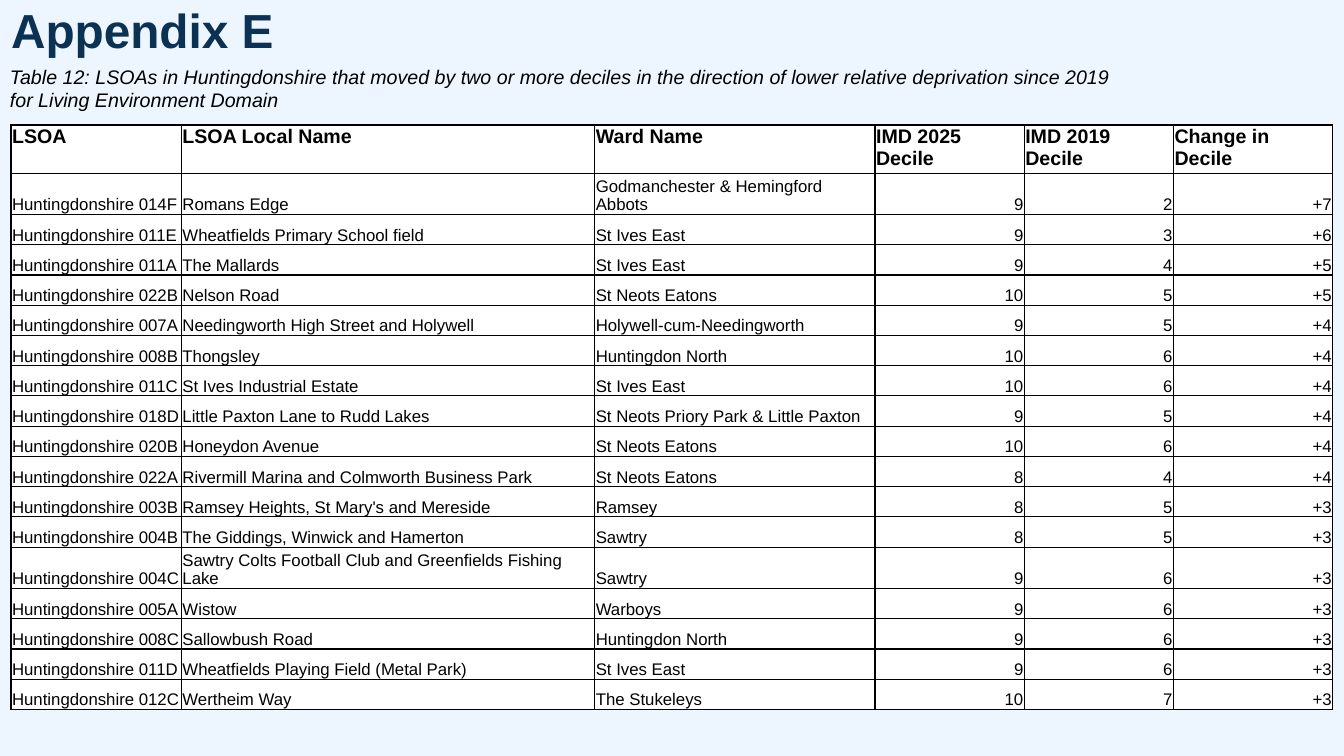
from dataclasses import dataclass

from lxml.etree import SubElement
from pptx import Presentation
from pptx.dml.color import RGBColor
from pptx.enum.text import MSO_ANCHOR, PP_ALIGN
from pptx.oxml.ns import qn
from pptx.util import Inches, Pt


@dataclass(frozen=True)
class Theme:
    font: str = "Arial"
    background: str = "EDF6FF"
    navy: str = "0B3153"
    black: str = "000000"
    white: str = "FFFFFF"
    title_size: float = 34.1
    heading_size: float = 14
    body_size: float = 12
    border_width: float = 1


THEME = Theme()

HEADINGS = ("LSOA", "LSOA Local Name", "Ward Name",
            "IMD 2025 Decile", "IMD 2019 Decile", "Change in Decile")
COLUMN_WIDTHS = (1.69, 4.1, 2.78, 1.48, 1.48, 1.58)
HEADING_HEIGHT, ROW_HEIGHT, TWO_LINE_HEIGHT = 0.34, 0.3, 0.41
TWO_LINE_CODES = ("014F", "004C")

# LSOA code, local name, ward, decile in 2025, decile in 2019
AREAS = (
    ("014F", "Romans Edge", "Godmanchester & Hemingford Abbots", 9, 2),
    ("011E", "Wheatfields Primary School field", "St Ives East", 9, 3),
    ("011A", "The Mallards", "St Ives East", 9, 4),
    ("022B", "Nelson Road", "St Neots Eatons", 10, 5),
    ("007A", "Needingworth High Street and Holywell", "Holywell-cum-Needingworth", 9, 5),
    ("008B", "Thongsley", "Huntingdon North", 10, 6),
    ("011C", "St Ives Industrial Estate", "St Ives East", 10, 6),
    ("018D", "Little Paxton Lane to Rudd Lakes", "St Neots Priory Park & Little Paxton", 9, 5),
    ("020B", "Honeydon Avenue", "St Neots Eatons", 10, 6),
    ("022A", "Rivermill Marina and Colmworth Business Park", "St Neots Eatons", 8, 4),
    ("003B", "Ramsey Heights, St Mary's and Mereside", "Ramsey", 8, 5),
    ("004B", "The Giddings, Winwick and Hamerton", "Sawtry", 8, 5),
    ("004C", "Sawtry Colts Football Club and Greenfields Fishing Lake", "Sawtry", 9, 6),
    ("005A", "Wistow", "Warboys", 9, 6),
    ("008C", "Sallowbush Road", "Huntingdon North", 9, 6),
    ("011D", "Wheatfields Playing Field (Metal Park)", "St Ives East", 9, 6),
    ("012C", "Wertheim Way", "The Stukeleys", 10, 7),
)


def add_run(paragraph, text, size, color=THEME.black, bold=False, italic=False):
    run = paragraph.add_run()
    run.text = text
    run.font.name = THEME.font
    run.font.size = Pt(size)
    run.font.bold = bold
    run.font.italic = italic
    run.font.color.rgb = RGBColor.from_string(color)


def add_text_frame(slide, left, top, width, height):
    box = slide.shapes.add_textbox(Inches(left), Inches(top), Inches(width), Inches(height))
    box.text_frame.word_wrap = True
    return box.text_frame


def add_title(slide, text):
    frame = add_text_frame(slide, 0.11, 0.16, 2.74, 0.86)
    frame.margin_left = frame.margin_right = frame.margin_top = frame.margin_bottom = 0
    paragraph = frame.paragraphs[0]
    paragraph.line_spacing = 0.7
    paragraph.space_after = Pt(6)
    add_run(paragraph, text, THEME.title_size, THEME.navy, bold=True)


def add_caption(slide, text):
    frame = add_text_frame(slide, 0, 0.59, 11.13, 0.57)
    add_run(frame.paragraphs[0], text, THEME.heading_size, italic=True)


def add_borders(cell):
    properties = cell._tc.get_or_add_tcPr()
    for side in ("a:lnL", "a:lnR", "a:lnT", "a:lnB"):
        line = SubElement(properties, qn(side), w=str(Pt(THEME.border_width)))
        fill = SubElement(line, qn("a:solidFill"))
        SubElement(fill, qn("a:srgbClr"), val=THEME.black)


def fill_cell(cell, text, is_heading, is_number):
    add_borders(cell)
    cell.fill.solid()
    cell.fill.fore_color.rgb = RGBColor.from_string(THEME.white)
    cell.margin_left = cell.margin_right = cell.margin_top = Inches(0.01)
    cell.margin_bottom = 0
    cell.vertical_anchor = MSO_ANCHOR.TOP if is_heading else MSO_ANCHOR.BOTTOM
    paragraph = cell.text_frame.paragraphs[0]
    paragraph.alignment = PP_ALIGN.RIGHT if is_number else PP_ALIGN.LEFT
    size = THEME.heading_size if is_heading else THEME.body_size
    add_run(paragraph, text, size, bold=is_heading)


def area_row(code, local_name, ward, decile_2025, decile_2019):
    """Return the texts of one row, with the change worked out."""
    return (f"Huntingdonshire {code}", local_name, ward, str(decile_2025),
            str(decile_2019), f"{decile_2025 - decile_2019:+d}")


def add_decile_table(slide):
    rows = [HEADINGS] + [area_row(*area) for area in AREAS]
    heights = [HEADING_HEIGHT] + [
        TWO_LINE_HEIGHT if area[0] in TWO_LINE_CODES else ROW_HEIGHT for area in AREAS]
    table = slide.shapes.add_table(
        len(rows), len(HEADINGS), Inches(0.11), Inches(1.24),
        Inches(sum(COLUMN_WIDTHS)), Inches(sum(heights))).table
    table.horz_banding = False
    for column, width in zip(table.columns, COLUMN_WIDTHS):
        column.width = Inches(width)
    for r, (texts, height) in enumerate(zip(rows, heights)):
        table.rows[r].height = Inches(height)
        for c, text in enumerate(texts):
            fill_cell(table.cell(r, c), text, is_heading=r == 0, is_number=r > 0 and c > 2)


def main():
    presentation = Presentation()
    presentation.slide_width = Inches(13.33)
    presentation.slide_height = Inches(7.5)
    slide = presentation.slides.add_slide(presentation.slide_layouts[6])
    slide.background.fill.solid()
    slide.background.fill.fore_color.rgb = RGBColor.from_string(THEME.background)
    add_title(slide, "Appendix E")
    add_caption(slide, "Table 12: LSOAs in Huntingdonshire that moved by two or more deciles "
                       "in the direction of lower relative deprivation since 2019 "
                       "for Living Environment Domain")
    add_decile_table(slide)
    presentation.save("out.pptx")


if __name__ == "__main__":
    main()
